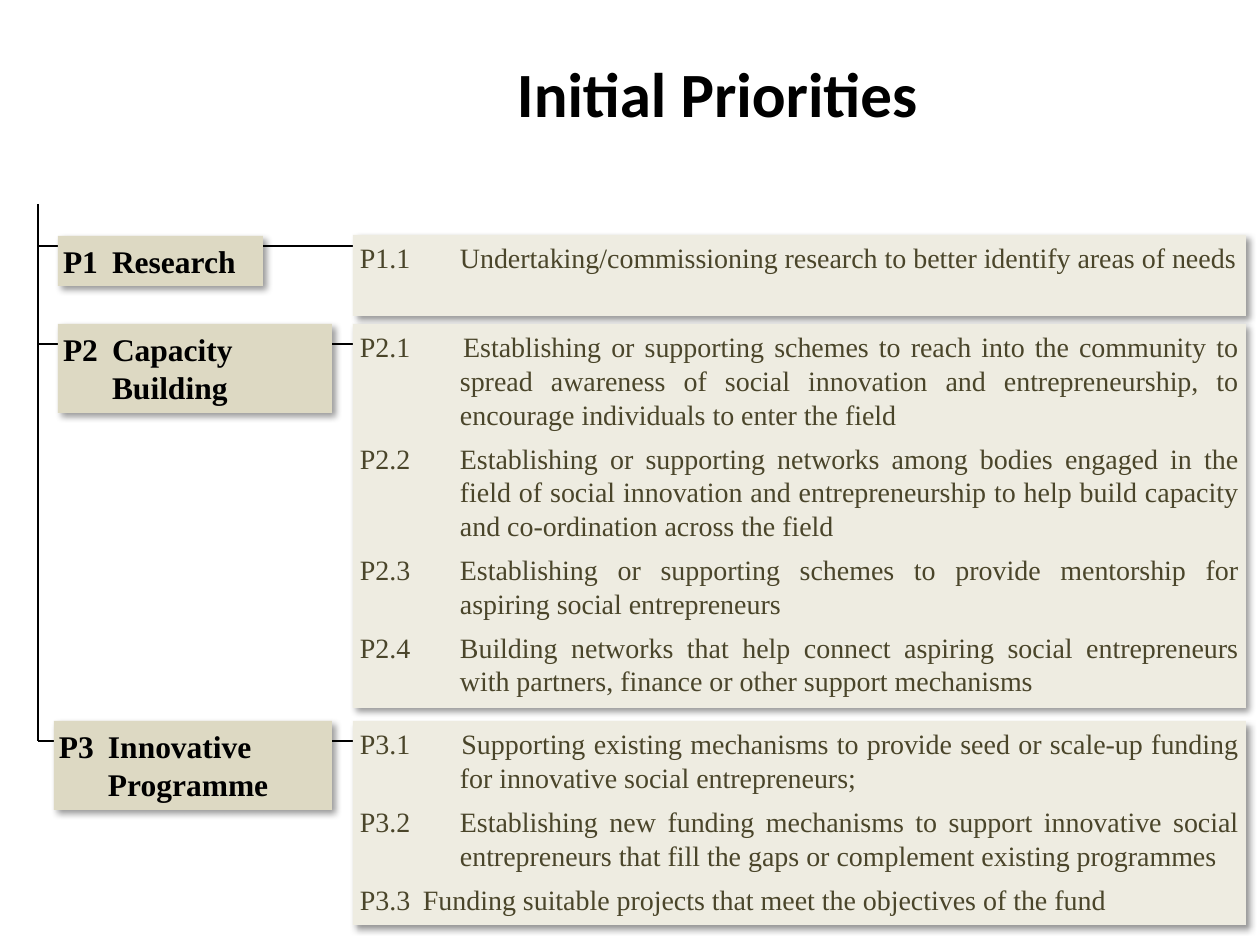
"""Build the Initial Priorities slide: a bracket of three priorities and their actions."""
import pptx
import pptx.dml.color
import pptx.enum.shapes
import pptx.enum.text
import pptx.oxml
import pptx.oxml.ns
import pptx.util
from lxml import etree

PX = 914400 / 126
BLACK = pptx.dml.color.RGBColor(0x00, 0x00, 0x00)
OLIVE = pptx.dml.color.RGBColor(0x4A, 0x45, 0x2A)
TAN = pptx.dml.color.RGBColor(0xDD, 0xD9, 0xC3)
CREAM = pptx.dml.color.RGBColor(0xEE, 0xEC, 0xE1)
ALIGN = pptx.enum.text.PP_ALIGN
SHADOW = (
    f'<a:effectLst {pptx.oxml.ns.nsdecls("a")}>'
    '<a:outerShdw blurRad="50800" dist="38100" dir="2700000" algn="tl" rotWithShape="0">'
    '<a:srgbClr val="000000"><a:alpha val="40000"/></a:srgbClr>'
    '</a:outerShdw></a:effectLst>'
)


def emu(px):
    return pptx.util.Emu(round(px * PX))


def add_text(box, paragraphs, size, font="Times New Roman", color=BLACK, bold=False, fill=None,
             align=ALIGN.LEFT, inset=13, hang=0, tab=False, before=0, spacing=None):
    left, top, width, height = map(emu, box)
    if fill is None:
        sp = s.shapes.add_textbox(left, top, width, height)
    else:
        sp = s.shapes.add_shape(pptx.enum.shapes.MSO_SHAPE.RECTANGLE, left, top, width, height)
        sp.fill.solid()
        sp.fill.fore_color.rgb = fill
        sp.line.fill.background()
        sp._element.spPr.append(pptx.oxml.parse_xml(SHADOW))
    tf = sp.text_frame
    tf.word_wrap = True
    tf.vertical_anchor = pptx.enum.text.MSO_ANCHOR.TOP
    tf.margin_left = tf.margin_right = emu(inset)
    tf.margin_top = tf.margin_bottom = emu(6)
    for i, text in enumerate(paragraphs):
        p = tf.paragraphs[0] if i == 0 else tf.add_paragraph()
        p.alignment = align
        p.line_spacing = spacing
        if i:
            p.space_before = pptx.util.Pt(before)
        indent = 0 if text.startswith("P3.3") else emu(hang)
        if indent:
            pPr = p._p.get_or_add_pPr()
            pPr.set("marL", str(indent))
            pPr.set("indent", str(-indent))
            if tab:
                tabs = etree.SubElement(pPr, pptx.oxml.ns.qn("a:tabLst"))
                etree.SubElement(tabs, pptx.oxml.ns.qn("a:tab"), pos=str(indent), algn="l")
        r = p.add_run()
        r.text = text
        r.font.name = font
        r.font.size = pptx.util.Pt(size)
        r.font.bold = bold
        r.font.color.rgb = color


prs = pptx.Presentation()
prs.slide_width = pptx.util.Inches(10)
prs.slide_height = pptx.util.Inches(7.5)
s = prs.slides.add_slide(prs.slide_layouts[6])

TRUNK, ACTIONS = 38, 353
for x1, y1, x2, y2 in (
    (TRUNK, 741, ACTIONS, 741),
    (TRUNK, 344, ACTIONS, 344),
    (TRUNK, 246, ACTIONS, 246),
    (TRUNK, 204, TRUNK, 741),
):
    line = s.shapes.add_connector(pptx.enum.shapes.MSO_CONNECTOR.STRAIGHT,
                                  emu(x1), emu(y1), emu(x2), emu(y2))
    line.line.color.rgb = BLACK
    line.line.width = pptx.util.Pt(1.5)
    etree.SubElement(line._element.spPr, pptx.oxml.ns.qn("a:effectLst"))

add_text((504, 63, 433, 76), ["Initial Priorities"], 36, font="Calibri", bold=True, spacing=0.8)

priorities = [
    ("P1\tResearch", (58, 236, 205, 50), (235, 81), [
        "P1.1 \tUndertaking/commissioning research to better identify areas of needs",
    ]),
    ("P2 \tCapacity Building", (58, 324, 274, 89), (324, 384), [
        "P2.1 \tEstablishing or supporting schemes to reach into the community to spread "
        "awareness of social innovation and entrepreneurship, to encourage individuals to "
        "enter the field",
        "P2.2\tEstablishing or supporting networks among bodies engaged in the field of social "
        "innovation and entrepreneurship to help build capacity and co-ordination across the field",
        "P2.3\tEstablishing or supporting schemes to provide mentorship for aspiring social "
        "entrepreneurs",
        "P2.4\tBuilding networks that help connect aspiring social entrepreneurs with partners, "
        "finance or other support mechanisms",
    ]),
    ("P3 \tInnovative Programme", (54, 721, 278, 89), (721, 204), [
        "P3.1 \tSupporting existing mechanisms to provide seed or scale-up funding for "
        "innovative social entrepreneurs;",
        "P3.2\tEstablishing new funding mechanisms to support innovative social entrepreneurs "
        "that fill the gaps or complement existing programmes",
        "P3.3\tFunding suitable projects that meet the objectives of the fund",
    ]),
]
for label, label_box, (top, height), actions in priorities:
    add_text(label_box, [label], 18, bold=True, fill=TAN, inset=5, hang=49)
    add_text((ACTIONS, top, 893, height), actions, 16, color=OLIVE, fill=CREAM,
             align=ALIGN.JUSTIFY, inset=7, hang=100, tab=True, before=6)

prs.save("out.pptx")
